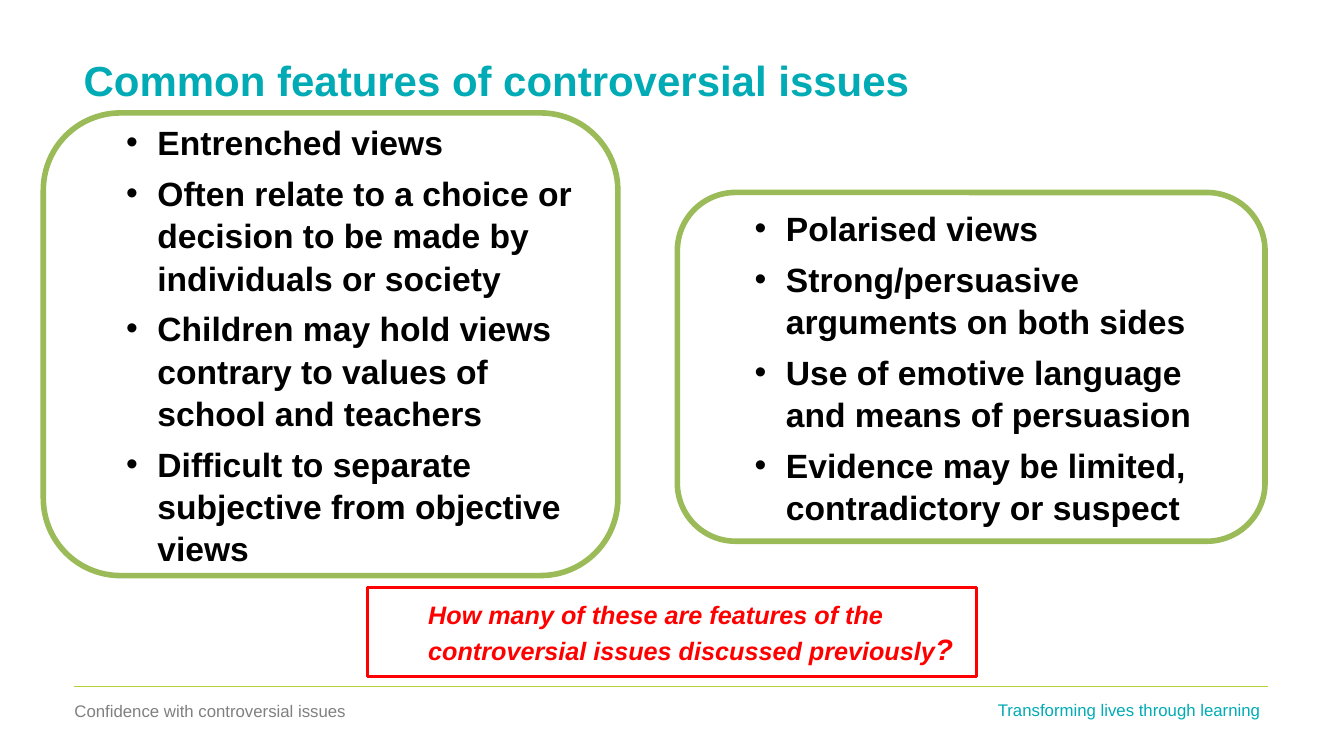
from lxml import etree
from pptx import Presentation
from pptx import util as u
from pptx.dml.color import RGBColor
from pptx.enum import shapes, text
from pptx.oxml.ns import qn

TEAL, GREEN, LIME = "00ABB5", "9BBB59", "B3D236"
RED, GREY, BLACK, WHITE = "FF0000", "808080", "000000", "FFFFFF"


def rgb(value):
    return RGBColor.from_string(value)


class Deck:
    font = "Arial"
    cell = u.Inches(0.1)
    cols, rows = 133.33, 75
    inset = 1

    def __init__(self):
        self.prs = Presentation()
        self.prs.slide_width = self.grid(self.cols)
        self.prs.slide_height = self.grid(self.rows)
        self.slide = self.prs.slides.add_slide(self.prs.slide_layouts[3])

    def grid(self, n):
        return u.Emu(round(n * self.cell))

    def box(self, *at):
        return [self.grid(n) for n in at]

    def place(self, sp, at):
        sp.left, sp.top, sp.width, sp.height = self.box(*at)

    def frame(self, sp, anchor=text.MSO_ANCHOR.MIDDLE):
        tf = sp.text_frame
        tf.word_wrap = True
        tf.auto_size = text.MSO_AUTO_SIZE.NONE
        tf.vertical_anchor = anchor
        return tf

    def run(self, p, words, size, color, bold=False, italic=False):
        r = p.add_run()
        r.text = words
        f = r.font
        f.name, f.size, f.bold, f.italic = self.font, u.Pt(size), bold, italic
        f.color.rgb = rgb(color)

    def indent(self, p, left, first=0, bullet=None):
        pPr = p._p.get_or_add_pPr()
        pPr.set("marL", str(self.grid(left)))
        pPr.set("indent", str(self.grid(first)))
        if bullet:
            etree.SubElement(pPr, qn("a:buChar")).set("char", bullet)
        p.alignment = text.PP_ALIGN.LEFT
        p.line_spacing = 1.05
        p.space_before, p.space_after = u.Pt(0), u.Pt(6)

    def title(self, words, *at):
        sp = self.slide.shapes.title
        self.place(sp, at)
        p = self.frame(sp).paragraphs[0]
        p.alignment = text.PP_ALIGN.LEFT
        self.run(p, words, 30, TEAL, bold=True)

    def label(self, words, color, *at):
        sp = self.slide.shapes.add_textbox(*self.box(*at))
        p = self.frame(sp, text.MSO_ANCHOR.TOP).paragraphs[0]
        self.run(p, words, 12, color)

    def rule(self, x1, x2, y):
        line = self.slide.shapes.add_connector(
            shapes.MSO_CONNECTOR.STRAIGHT, *self.box(x1, y, x2, y))
        line.line.color.rgb = rgb(LIME)
        line.line.width = u.Pt(0.75)
        etree.SubElement(line._element.spPr, qn("a:effectLst"))

    def panel(self, kind, color, weight, *at):
        sp = self.slide.shapes.add_shape(kind, *self.box(*at))
        sp.shadow.inherit = False
        sp.fill.solid()
        sp.fill.fore_color.rgb = rgb(WHITE)
        sp.line.color.rgb = rgb(color)
        sp.line.width = u.Pt(weight)
        return sp

    def bullets(self, idx, items, *at):
        kind = shapes.MSO_SHAPE.ROUNDED_RECTANGLE
        outline = self.panel(kind, GREEN, 4, *at)
        corner = outline.adjustments[0] * min(at[2:]) * 0.29
        sp = self.slide.placeholders[idx]
        self.place(sp, at)
        outline._element.addnext(sp._element)
        tf = self.frame(sp)
        tf.margin_left = tf.margin_right = self.grid(self.inset + corner)
        for i, item in enumerate(items):
            p = tf.add_paragraph() if i else tf.paragraphs[0]
            self.indent(p, 8.1, -3.1, "•")
            self.run(p, item, 24, BLACK, bold=True)

    def question(self, words, mark, *at):
        sp = self.panel(shapes.MSO_SHAPE.RECTANGLE, RED, 2, *at)
        p = self.frame(sp).paragraphs[0]
        self.indent(p, 5)
        for part, size in ((words, 18), (mark, 21)):
            self.run(p, part, size, RED, bold=True, italic=True)


def main():
    d = Deck()
    d.rule(7.3, 125.8, 68.1)
    d.label("Confidence with controversial issues", GREY, 6.4, 69, 30.1, 3)
    d.label("Transforming lives through learning", TEAL, 98, 68.9, 30.1, 3)
    d.title("Common features of controversial issues", 7.3, 4, 118.5, 7.8)
    d.question("How many of these are features of the controversial issues "
               "discussed previously", "?", 36.5, 58.3, 60.4, 8.8)
    d.bullets(1, [
        "Entrenched views",
        "Often relate to a choice or decision to be made by individuals or society",
        "Children may hold views contrary to values of school and teachers",
        "Difficult to separate subjective from objective views",
    ], 4.3, 11.2, 57, 45.9)
    d.bullets(2, [
        "Polarised views",
        "Strong/persuasive arguments on both sides",
        "Use of emotive language and means of persuasion",
        "Evidence may be limited, contradictory or suspect",
    ], 67.2, 19.1, 58.3, 34.6)
    d.prs.save("out.pptx")


if __name__ == "__main__":
    main()
